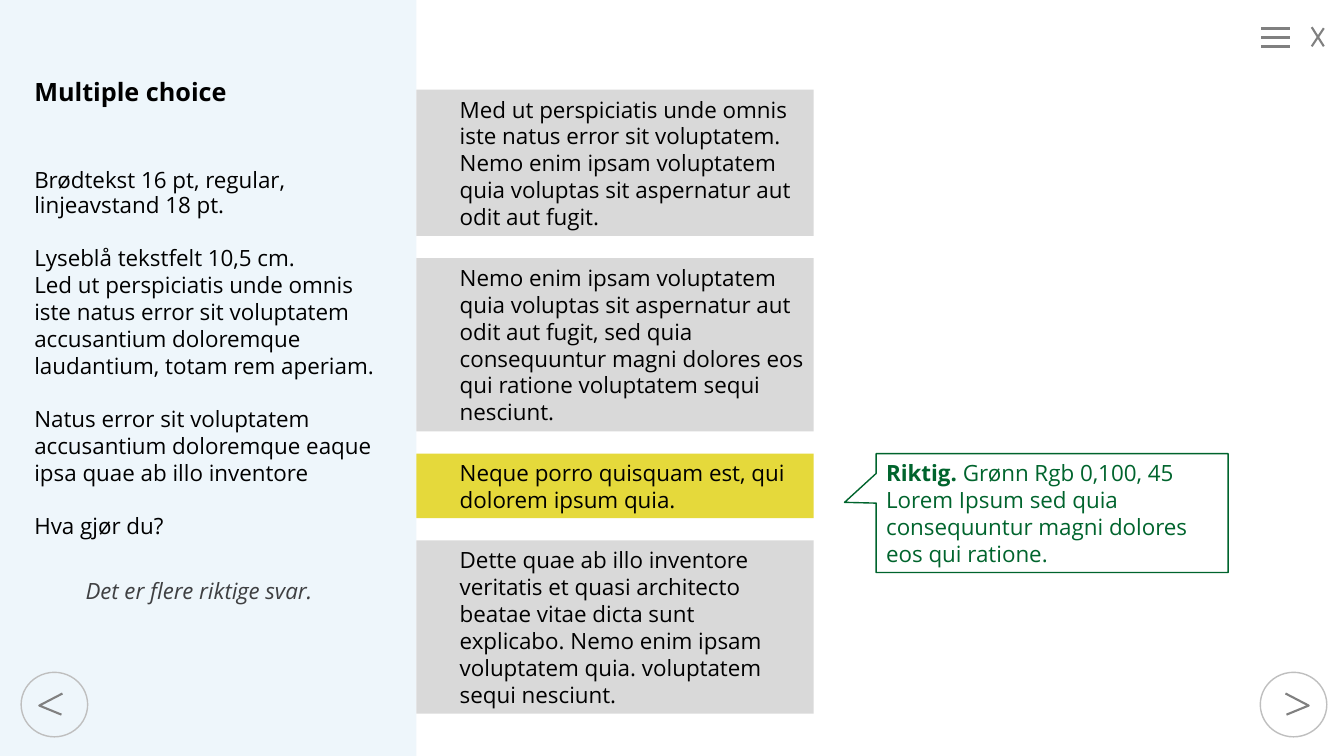
from lxml import etree
from pptx import Presentation
from pptx import util as u
from pptx.dml.color import RGBColor
from pptx.enum import shapes, text
from pptx.oxml.ns import qn

BLACK = RGBColor(0x00, 0x00, 0x00)
PALE_BLUE = RGBColor(0xEE, 0xF6, 0xFB)
LIGHT_GREY = RGBColor(0xD9, 0xD9, 0xD9)
RING_GREY = RGBColor(0xBF, 0xBF, 0xBF)
ICON_GREY = RGBColor(0x80, 0x80, 0x80)
HINT_GREY = RGBColor(0x3F, 0x40, 0x42)
YELLOW = RGBColor(0xE5, 0xD9, 0x3B)
GREEN = RGBColor(0x00, 0x64, 0x2D)
FONT = "Open Sans"

TITLE = "Multiple choice"
# Text, space after in points
BODY = [
    ("Brødtekst 16 pt, regular, linjeavstand 18 pt.", 19),
    ("Lyseblå tekstfelt 10,5 cm.", 0),
    ("Led ut perspiciatis unde omnis iste natus error sit voluptatem "
     "accusantium doloremque laudantium, totam rem aperiam.", 19),
    ("Natus error sit voluptatem accusantium doloremque eaque ipsa quae ab illo inventore", 19),
    ("Hva gjør du?", 0),
]
HINT = "Det er flere riktige svar."
# Text, height, fill
ANSWERS = [
    ("Med ut perspiciatis unde omnis iste natus error sit voluptatem. Nemo enim ipsam "
     "voluptatem quia voluptas sit aspernatur aut odit aut fugit.", 1.45, LIGHT_GREY),
    ("Nemo enim ipsam voluptatem quia voluptas sit aspernatur aut odit aut fugit, sed quia "
     "consequuntur magni dolores eos qui ratione voluptatem sequi nesciunt.", 1.72, LIGHT_GREY),
    ("Neque porro quisquam est, qui dolorem ipsum quia.", 0.64, YELLOW),
    ("Dette quae ab illo inventore veritatis et quasi architecto beatae vitae dicta sunt "
     "explicabo. Nemo enim ipsam voluptatem quia. voluptatem sequi nesciunt.", 1.72, LIGHT_GREY),
]
FEEDBACK = [
    ("Riktig. ", True),
    ("Grønn Rgb 0,100, 45 Lorem Ipsum sed quia consequuntur magni dolores eos qui ratione.", False),
]
PANEL_WIDTH = 4.13
ANSWER_TOP, ANSWER_WIDTH, ANSWER_GAP = 0.89, 3.94, 0.22
# Centre x, direction of the chevron
NAV_BUTTONS = [(0.54, -1), (12.83, 1)]
NAV_Y = 6.99
CLOSE_LINES = [(13.01, 0.27, 13.13, 0.46), (13.13, 0.28, 13.01, 0.46)]
MENU_LINES = [(12.51, 0.28 + 0.09 * i, 12.79, 0.28 + 0.09 * i) for i in range(3)]


def inches(*values):
    return [u.Inches(value) for value in values]


def style(shape, fill=None, line=None, width=1):
    shape.shadow.inherit = False
    if fill is None:
        shape.fill.background()
    else:
        shape.fill.solid()
        shape.fill.fore_color.rgb = fill
    if line is None:
        shape.line.fill.background()
    else:
        shape.line.color.rgb = line
        shape.line.width = u.Pt(width)


def add_span(para, words, color=BLACK, size=16, bold=False, italic=False):
    para.alignment = text.PP_ALIGN.LEFT
    span = para.add_run()
    span.text = words
    font = span.font
    font.name, font.size, font.bold, font.italic = FONT, u.Pt(size), bold, italic
    font.color.rgb = color


def set_frame(frame, anchor, wrap=True, left=0.1):
    frame.word_wrap = wrap
    frame.auto_size = text.MSO_AUTO_SIZE.NONE
    frame.vertical_anchor = anchor
    frame.margin_left, frame.margin_right = inches(left, 0.1)
    frame.margin_top = frame.margin_bottom = u.Inches(0.05)
    return frame


def place(shape, left, top, width, height):
    shape.left, shape.top, shape.width, shape.height = inches(left, top, width, height)


def add_icon_line(ends, width):
    line = slide.shapes.add_connector(shapes.MSO_CONNECTOR.STRAIGHT, *inches(*ends))
    line.line.color.rgb = ICON_GREY
    line.line.width = u.Pt(width)
    etree.SubElement(line._element.spPr, qn("a:effectLst"))


def add_nav_button(center, direction):
    ring = slide.shapes.add_shape(
        shapes.MSO_SHAPE.OVAL, *inches(center - 0.33, NAV_Y - 0.32, 0.66, 0.64))
    style(ring, line=RING_GREY)
    start, *rest = [tuple(inches(center + direction * dx, y))
                    for dx, y in [(-0.08, 6.88), (0.15, 7), (-0.07, 7.09)]]
    builder = slide.shapes.build_freeform(*start)
    builder.add_line_segments(rest, close=False)
    style(builder.convert_to_shape(), line=ICON_GREY, width=1.5)


deck = Presentation()
deck.slide_width, deck.slide_height = inches(13.33, 7.5)
slide = deck.slides.add_slide(deck.slide_layouts[1])
title, body = slide.placeholders

panel = slide.shapes.add_shape(shapes.MSO_SHAPE.RECTANGLE, *inches(0, 0, PANEL_WIDTH, 7.5))
style(panel, fill=PALE_BLUE)
slide.shapes._spTree.insert(2, panel._element)

place(title, 0.24, 0.71, 2.2, 0.4)
frame = set_frame(title.text_frame, text.MSO_ANCHOR.TOP, wrap=False)
add_span(frame.paragraphs[0], TITLE, size=18, bold=True)

place(body, 0.24, 1.61, 3.77, 3.84)
frame = set_frame(body.text_frame, text.MSO_ANCHOR.TOP)
for number, (words, gap) in enumerate(BODY):
    para = frame.add_paragraph() if number else frame.paragraphs[0]
    if number == 0:
        para.line_spacing = u.Pt(18)
    para.space_before, para.space_after = u.Pt(0), u.Pt(gap)
    add_span(para, words)
    props = para._p.get_or_add_pPr()
    props.set("marL", "0")
    props.set("indent", "0")
    etree.SubElement(props, qn("a:buNone"))

top = ANSWER_TOP
for words, height, fill in ANSWERS:
    box = slide.shapes.add_shape(
        shapes.MSO_SHAPE.RECTANGLE, *inches(PANEL_WIDTH, top, ANSWER_WIDTH, height))
    style(box, fill=fill)
    frame = set_frame(box.text_frame, text.MSO_ANCHOR.MIDDLE, left=0.43)
    add_span(frame.paragraphs[0], words)
    top += height + ANSWER_GAP

callout = slide.shapes.add_shape(
    shapes.MSO_SHAPE.RECTANGULAR_CALLOUT, *inches(8.69, 4.5, 3.49, 1.18))
callout.adjustments[0], callout.adjustments[1] = -0.59, -0.09
style(callout, line=GREEN)
frame = set_frame(callout.text_frame, text.MSO_ANCHOR.MIDDLE)
for words, bold in FEEDBACK:
    add_span(frame.paragraphs[0], words, GREEN, bold=bold)

hint = slide.shapes.add_textbox(*inches(0.75, 5.68, 2.48, 0.37))
frame = set_frame(hint.text_frame, text.MSO_ANCHOR.TOP, wrap=False)
add_span(frame.paragraphs[0], HINT, HINT_GREY, italic=True)

for center, direction in NAV_BUTTONS:
    add_nav_button(center, direction)
for ends in CLOSE_LINES:
    add_icon_line(ends, 1.5)
for ends in MENU_LINES:
    add_icon_line(ends, 2.25)

deck.save("out.pptx")
